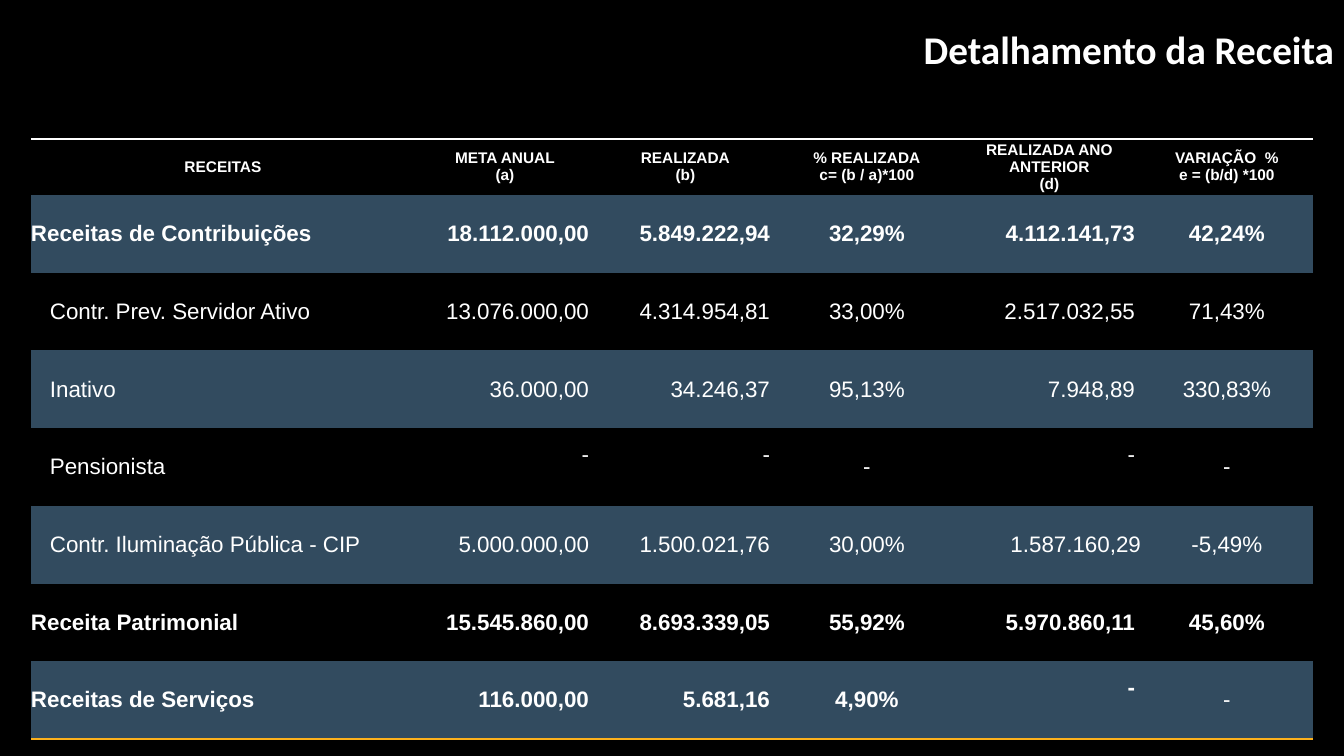
from typing import NamedTuple

from lxml.etree import SubElement
from pptx import Presentation
from pptx.dml.color import RGBColor
from pptx.enum.text import MSO_ANCHOR, MSO_AUTO_SIZE, PP_ALIGN
from pptx.oxml import parse_xml
from pptx.oxml.ns import nsdecls, qn
from pptx.util import Emu, Pt

BLACK = RGBColor(0x00, 0x00, 0x00)
WHITE = RGBColor(0xFF, 0xFF, 0xFF)
BAND = RGBColor(0x32, 0x4B, 0x5F)
GOLD = RGBColor(0xFC, 0xB1, 0x1C)
NO_STYLE = "{2D5ABB26-0587-4C30-8999-92F81FD0307C}"
LEFT, TOP, HEADER_H, BODY_H = 31, 139, 56, 544
INDENT, NUMBER_PAD, DASH_LIFT = 19, 6, 24


class Column(NamedTuple):
    heading: str
    width: int
    align: PP_ALIGN


class Revenue(NamedTuple):
    label: str
    values: tuple[str, ...]
    main: bool = False
    flush_column: int = 0


COLUMNS = [
    Column("RECEITAS", 384, PP_ALIGN.LEFT),
    Column("META ANUAL\n(a)", 180, PP_ALIGN.RIGHT),
    Column("REALIZADA\n(b)", 181, PP_ALIGN.RIGHT),
    Column("% REALIZADA\nc= (b / a)*100", 182, PP_ALIGN.CENTER),
    Column("REALIZADA ANO ANTERIOR\n(d)", 183, PP_ALIGN.RIGHT),
    Column("VARIAÇÃO  %\ne = (b/d) *100", 172, PP_ALIGN.CENTER),
]
REVENUES = [
    Revenue("Receitas de Contribuições",
            ("18.112.000,00", "5.849.222,94", "32,29%", "4.112.141,73", "42,24%"), main=True),
    Revenue("Contr. Prev. Servidor Ativo",
            ("13.076.000,00", "4.314.954,81", "33,00%", "2.517.032,55", "71,43%")),
    Revenue("Inativo", ("36.000,00", "34.246,37", "95,13%", "7.948,89", "330,83%")),
    Revenue("Pensionista", ("-", "-", "-", "-", "-")),
    Revenue("Contr. Iluminação Pública - CIP",
            ("5.000.000,00", "1.500.021,76", "30,00%", "1.587.160,29", "-5,49%"), flush_column=4),
    Revenue("Receita Patrimonial",
            ("15.545.860,00", "8.693.339,05", "55,92%", "5.970.860,11", "45,60%"), main=True),
    Revenue("Receitas de Serviços",
            ("116.000,00", "5.681,16", "4,90%", "-", "-"), main=True),
]


def px(n: int) -> Emu:
    """Turn pixels into EMU."""
    return Emu(round(n * 914400 / 100.8))


def write(tf, text: str, size: int, bold: bool, align: PP_ALIGN, font: str = "Arial") -> None:
    """Fill a text frame and format all its runs."""
    tf.text = text
    for p in tf.paragraphs:
        p.alignment = align
        for r in p.runs:
            r.font.name, r.font.size, r.font.bold = font, Pt(size), bold
            r.font.color.rgb = WHITE


def set_border(cell, side: str, color: RGBColor) -> None:
    """Draw a one-point border on one side of a cell."""
    ln = parse_xml(f'<a:{side} {nsdecls("a")} w="12700"/>')
    fill = SubElement(ln, qn("a:solidFill"))
    SubElement(fill, qn("a:srgbClr"), val=str(color))
    cell._tc.get_or_add_tcPr().insert(0, ln)


def prepare(cell) -> None:
    """Centre a cell vertically and clear its margins."""
    cell.vertical_anchor = MSO_ANCHOR.MIDDLE
    cell.margin_left = cell.margin_right = cell.margin_top = cell.margin_bottom = 0


def fill_header(cell, column: Column) -> None:
    """Write a column heading under the top rule."""
    prepare(cell)
    cell.fill.background()
    write(cell.text_frame, column.heading, 11, True, PP_ALIGN.CENTER)
    set_border(cell, "lnT", WHITE)


def fill_body(cell, revenue: Revenue, row: int, col: int) -> None:
    """Write one label or value of a revenue row."""
    prepare(cell)
    text = (revenue.label, *revenue.values)[col]
    align = COLUMNS[col].align
    if row % 2:
        cell.fill.solid()
        cell.fill.fore_color.rgb = BAND
    else:
        cell.fill.background()
    if col == 0 and not revenue.main:
        cell.margin_left = px(INDENT)
    if align == PP_ALIGN.RIGHT:
        cell.margin_right = px(0 if col == revenue.flush_column else NUMBER_PAD)
        cell.margin_bottom = px(DASH_LIFT if text == "-" else 0)
    bold = revenue.main and not (text == "-" and align == PP_ALIGN.CENTER)
    write(cell.text_frame, text, 16, bold, align)
    if row == len(REVENUES):
        set_border(cell, "lnB", GOLD)


def add_title(s) -> None:
    """Add the right-aligned slide title."""
    tf = s.shapes.add_textbox(px(495), px(20), px(849), px(57)).text_frame
    tf.word_wrap = True
    tf.auto_size = MSO_AUTO_SIZE.SHAPE_TO_FIT_TEXT
    write(tf, "Detalhamento da Receita", 28, True, PP_ALIGN.RIGHT, "Calibri")


def add_revenue_table(s) -> None:
    """Add the table of revenues."""
    width = sum(c.width for c in COLUMNS)
    table = s.shapes.add_table(len(REVENUES) + 1, len(COLUMNS), px(LEFT), px(TOP),
                               px(width), px(HEADER_H + BODY_H)).table
    table._tbl.tblPr.find(qn("a:tableStyleId")).text = NO_STYLE
    table.horz_banding = False
    table.rows[0].height = px(HEADER_H)
    for col, column in enumerate(COLUMNS):
        table.columns[col].width = px(column.width)
        fill_header(table.cell(0, col), column)
    for row, revenue in enumerate(REVENUES, 1):
        table.rows[row].height = Emu(px(BODY_H) // len(REVENUES))
        for col in range(len(COLUMNS)):
            fill_body(table.cell(row, col), revenue, row, col)


def main() -> None:
    """Build and save the slide."""
    prs = Presentation()
    prs.slide_width, prs.slide_height = px(1344), px(756)
    s = prs.slides.add_slide(prs.slide_layouts[6])
    s.background.fill.solid()
    s.background.fill.fore_color.rgb = BLACK
    add_title(s)
    add_revenue_table(s)
    prs.save("out.pptx")


if __name__ == "__main__":
    main()
